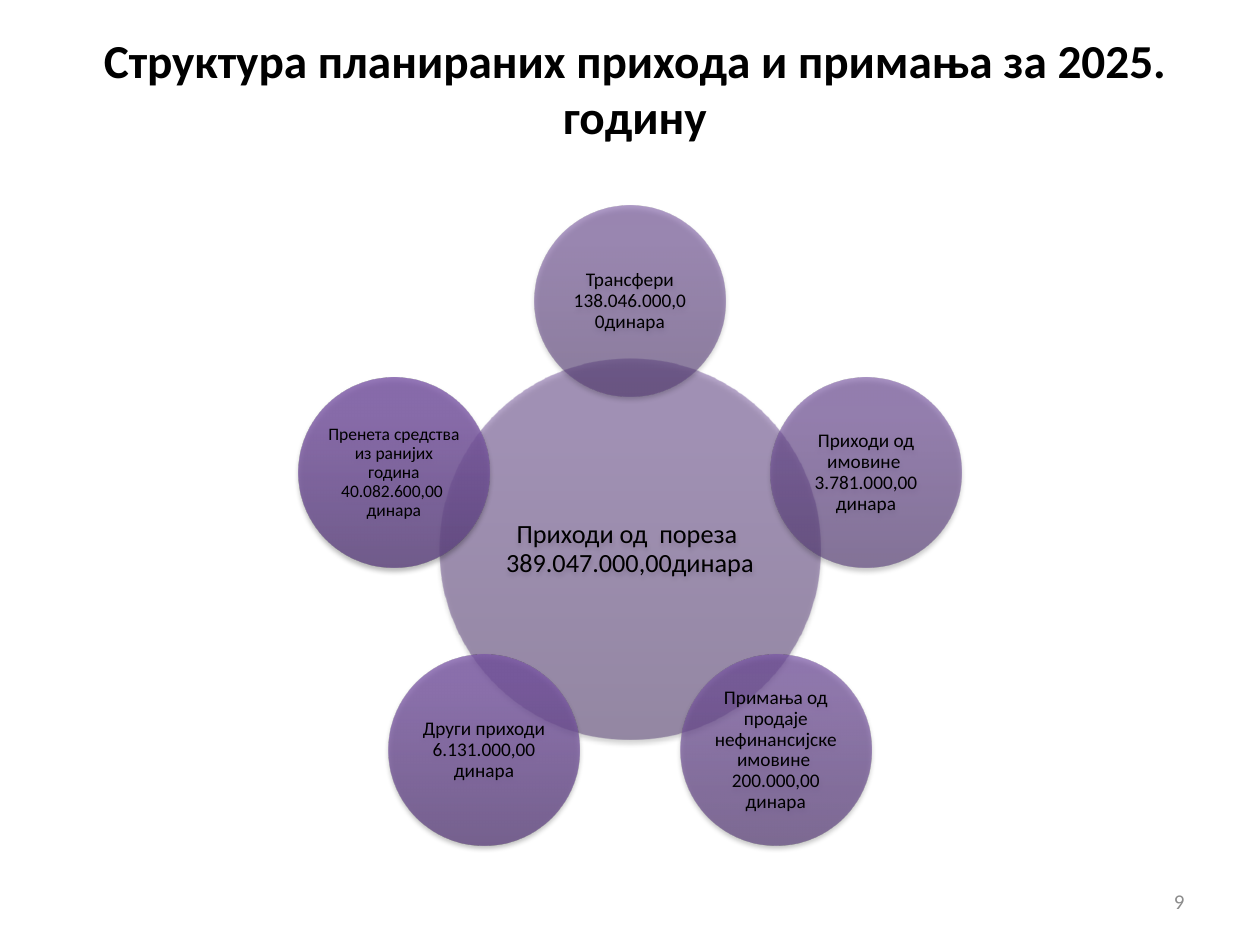
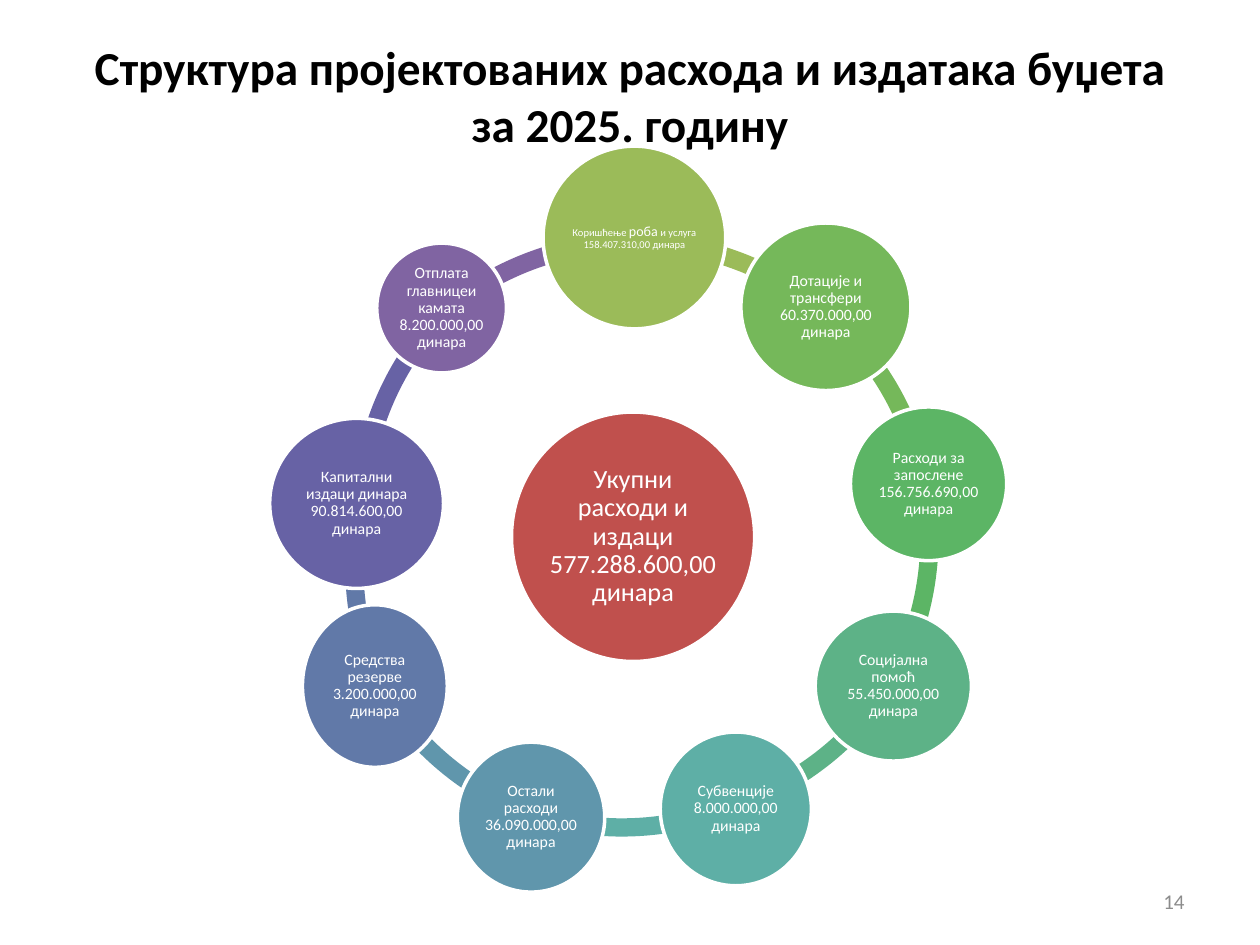
from math import cos, radians, sin

from lxml import etree
from pptx import Presentation
from pptx.dml.color import RGBColor
from pptx.enum.shapes import MSO_SHAPE
from pptx.enum.text import MSO_ANCHOR, PP_ALIGN
from pptx.oxml import parse_xml
from pptx.util import Inches, Pt

OVAL, ARC = MSO_SHAPE.OVAL, MSO_SHAPE.BLOCK_ARC
MIDDLE = MSO_ANCHOR.MIDDLE
CENTER, RIGHT = PP_ALIGN.CENTER, PP_ALIGN.RIGHT
FONT = "Calibri"
BLACK, WHITE, GRAY, RED = "000000", "FFFFFF", "8C8C8C", "C0504D"
DRAWING = "http://schemas.openxmlformats.org/drawingml/2006/main"

TITLES = [
    # text, page number, left, top, height
    ("Структура планираних прихода и примања за 2025. годину", "9", 0.54, 0.27, 0.85),
    ("Структура пројектованих расхода и издатака буџета за 2025. годину", "14",
     0.5, 0.29, 0.93),
]

INCOME_CENTER = (5, 4.36)
INCOME_RADIUS = 1.97
INCOMES = [
    # text, text size, diameter, gradient colours from bottom to top
    ("Приходи од  пореза  389.047.000,00динара", 15, 3.02, ("563D74", "705097", "704F99")),
    ("Трансфери 138.046.000,0 0динара", 11, 1.51, ("583E77", "72519A", "73509C")),
    ("Приходи од имовине  3.781.000,00 динара", 11, 1.51, ("5A407A", "75539E", "7551A0")),
    ("Примања од продаје нефинансијске имовине  200.000,00 динара", 11, 1.51,
     ("5C417C", "7754A1", "7753A4")),
    ("Други приходи 6.131.000,00 динара", 11, 1.51, ("5E427E", "7956A4", "7A55A6")),
    ("Пренета средства из ранијих година 40.082.600,00  динара", 10, 1.51,
     ("5F4580", "7C59A6", "7C58A8")),
]

RING_SIZE, RING_THICKNESS = 4.83, 0.03
RING = (2.62, 1.85)
EXPENSES = [
    # text, circle frame, colour, arc corner, arc start and end
    ("Коришћење роба и услуга 158.407.310,00 динара", (4.31, 1.16, 1.45, 1.45),
     "9BBB59", RING, (162, 186)),
    ("Дотације и трансфери 60.370.000,00 динара", (5.88, 1.77, 1.35, 1.33),
     "75B85A", RING, (186, 210)),
    ("Расходи за запослене 156.756.690,00 динара", (6.75, 3.23, 1.24, 1.22),
     "5CB565", RING, (210, 18)),
    ("Социјална помоћ 55.450.000,00 динара", (6.47, 4.85, 1.24, 1.19),
     "5DB287", (2.67, 1.76), (19.47, 42.83)),
    ("Субвенције 8.000.000,00 динара", (5.24, 5.81, 1.2, 1.22),
     "5EAFA6", (2.52, 1.81), (40.56, 64.56)),
    ("Остали расходи 36.090.000,00 динара", (3.63, 5.89, 1.17, 1.19),
     "6096AC", RING, (66, 90)),
    ("Средства резерве 3.200.000,00 динара", (2.4, 4.8, 1.15, 1.29),
     "6179A8", (2.74, 2.08), (93.85, 115.28)),
    ("Капитални издаци динара 90.814.600,00 динара", (2.14, 3.32, 1.38, 1.35),
     "6762A5", (2.79, 1.69), (109.51, 134.63)),
    ("Отплата главницеи камата 8.200.000,00 динара", (2.99, 1.93, 1.03, 1.03),
     "8064A2", RING, (138, 162)),
]


def write(shape, *spans, color=BLACK, bold=False, align=CENTER, spacing=None, inset=None):
    """Fill a shape with one paragraph made of (text, size) spans."""
    frame = shape.text_frame
    frame.word_wrap = True
    frame.vertical_anchor = MIDDLE
    if inset is not None:
        frame.margin_left = frame.margin_right = Inches(inset)
        frame.margin_top = frame.margin_bottom = Inches(inset)
    para = frame.paragraphs[0]
    para.alignment = align
    if spacing:
        para.line_spacing = spacing
    for text, size in spans:
        span = para.add_run()
        span.text = text
        span.font.name = FONT
        span.font.size = Pt(size)
        span.font.bold = bold
        span.font.color.rgb = RGBColor.from_string(color)


def add_shape(page, kind, left, top, width, height, fill=None, line=None):
    shape = page.shapes.add_shape(kind, Inches(left), Inches(top), Inches(width), Inches(height))
    shape.shadow.inherit = False
    if fill:
        shape.fill.solid()
        shape.fill.fore_color.rgb = RGBColor.from_string(fill)
    else:
        shape.fill.background()
    if line:
        shape.line.color.rgb = RGBColor.from_string(line)
        shape.line.width = Pt(2)
    else:
        shape.line.fill.background()
    return shape


deck = Presentation()
deck.slide_width, deck.slide_height = Inches(10), Inches(7.5)

pages = []
for text, number, left, top, height in TITLES:
    page = deck.slides.add_slide(deck.slide_layouts[5])
    title = page.shapes.title
    title.left, title.top = Inches(left), Inches(top)
    title.width, title.height = Inches(9), Inches(height)
    write(title, (text, 27), bold=True)
    box = page.shapes.add_textbox(Inches(7.17), Inches(6.95), Inches(2.33), Inches(0.4))
    write(box, (number, 12), color=GRAY, align=RIGHT)
    pages.append(page)
income_page, expense_page = pages

# Incomes: one large circle with five satellites at equal angles
for index, (text, size, diameter, colors) in enumerate(INCOMES):
    center_x, center_y = INCOME_CENTER
    if index:
        angle = radians(-90 + 72 * (index - 1))
        center_x += INCOME_RADIUS * cos(angle)
        center_y += INCOME_RADIUS * sin(angle)
    circle = add_shape(income_page, OVAL, center_x - diameter / 2, center_y - diameter / 2,
                       diameter, diameter)
    opacity = 50 + 6 * index
    stops = "".join(
        f'<a:gs pos="{place * 1000}"><a:srgbClr val="{color}">'
        f'<a:alpha val="{opacity * 1000}"/></a:srgbClr></a:gs>'
        for place, color in zip((0, 80, 100), colors))
    gradient = parse_xml(
        f'<a:gradFill xmlns:a="{DRAWING}" rotWithShape="1"><a:gsLst>{stops}</a:gsLst>'
        '<a:lin ang="16200000" scaled="0"/></a:gradFill>')
    properties = circle._element.spPr
    properties.replace(properties.find(f"{{{DRAWING}}}noFill"), gradient)
    effects = properties.find(f"{{{DRAWING}}}effectLst")
    shadow = etree.SubElement(effects, f"{{{DRAWING}}}outerShdw", blurRad=str(Pt(3.1)),
                              dist=str(Pt(1.8)), dir="5400000", rotWithShape="0")
    shade = etree.SubElement(shadow, f"{{{DRAWING}}}srgbClr", val=BLACK)
    etree.SubElement(shade, f"{{{DRAWING}}}alpha", val="35000")
    write(circle, (text, size), spacing=0.9, inset=0.02 if size > 10 else 0.01)

# Expenses: ring segments first, then the circles above them
for text, frame, color, corner, ends in reversed(EXPENSES):
    segment = add_shape(expense_page, ARC, *corner, RING_SIZE, RING_SIZE, fill=color)
    for index, value in enumerate((*ends, RING_THICKNESS)):
        segment.adjustments[index] = value

total = add_shape(expense_page, OVAL, 4.06, 3.27, 1.93, 1.98, fill=RED, line=WHITE)
write(total, ("Укупни расходи и издаци 577.288.600,00 динара", 15), color=WHITE,
      spacing=0.9, inset=0.02)

for text, frame, color, corner, ends in EXPENSES:
    circle = add_shape(expense_page, OVAL, *frame, fill=color, line=WHITE)
    before, accent, after = text.partition("роба")
    spans = [(before, 6), (accent, 8), (after, 6)] if accent else [(text, 9)]
    write(circle, *spans, color=WHITE, spacing=0.9, inset=0.01)

deck.save("out.pptx")
